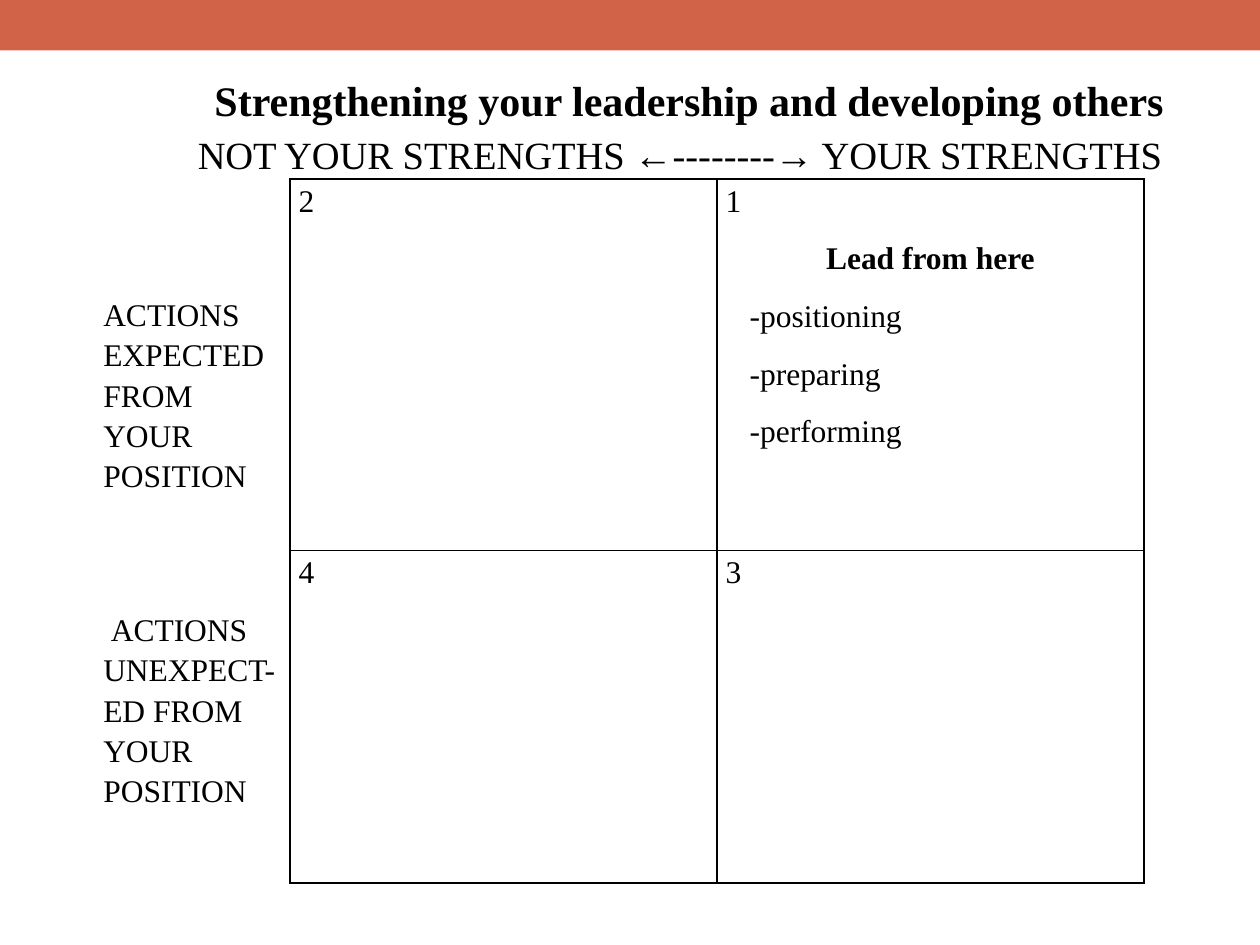
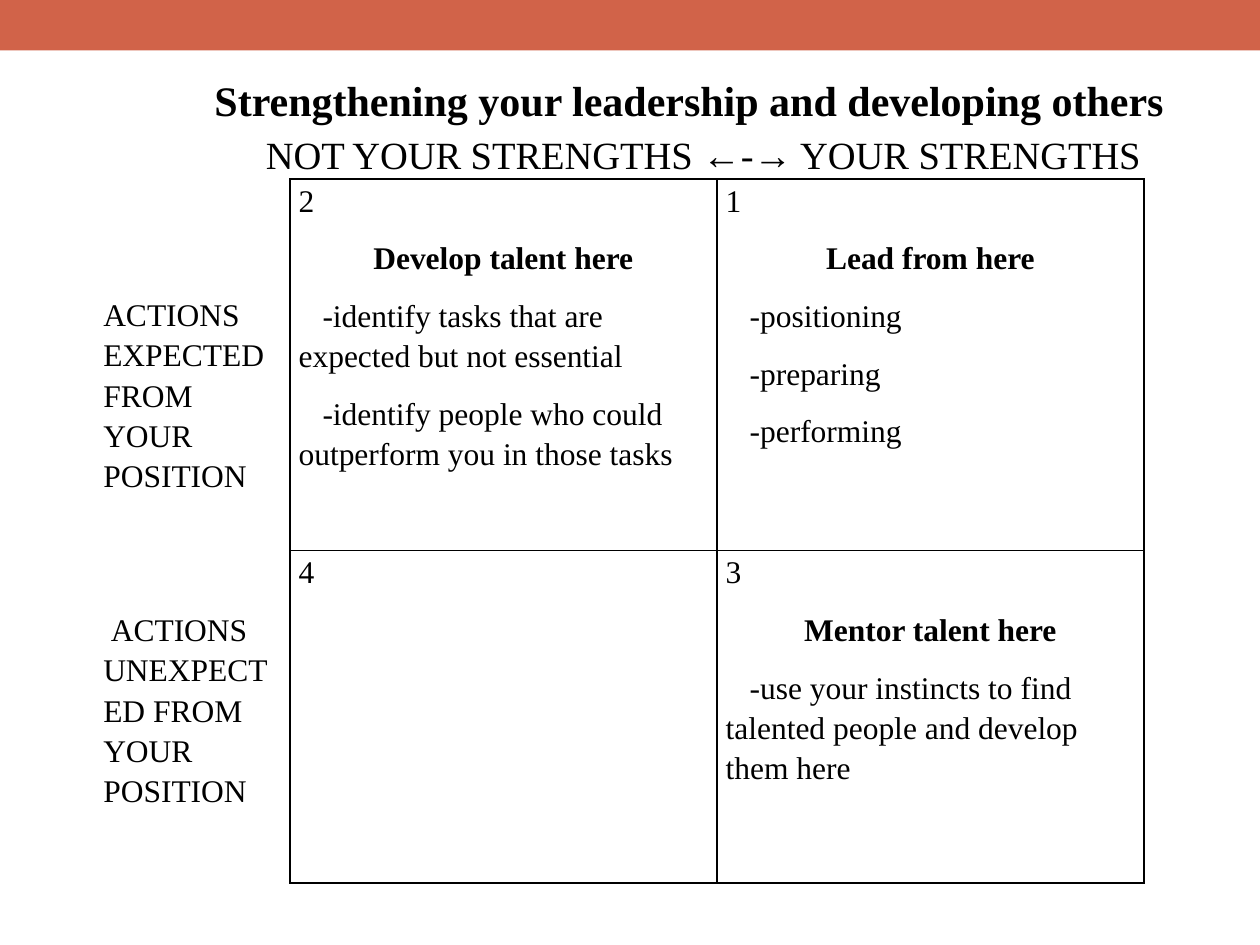
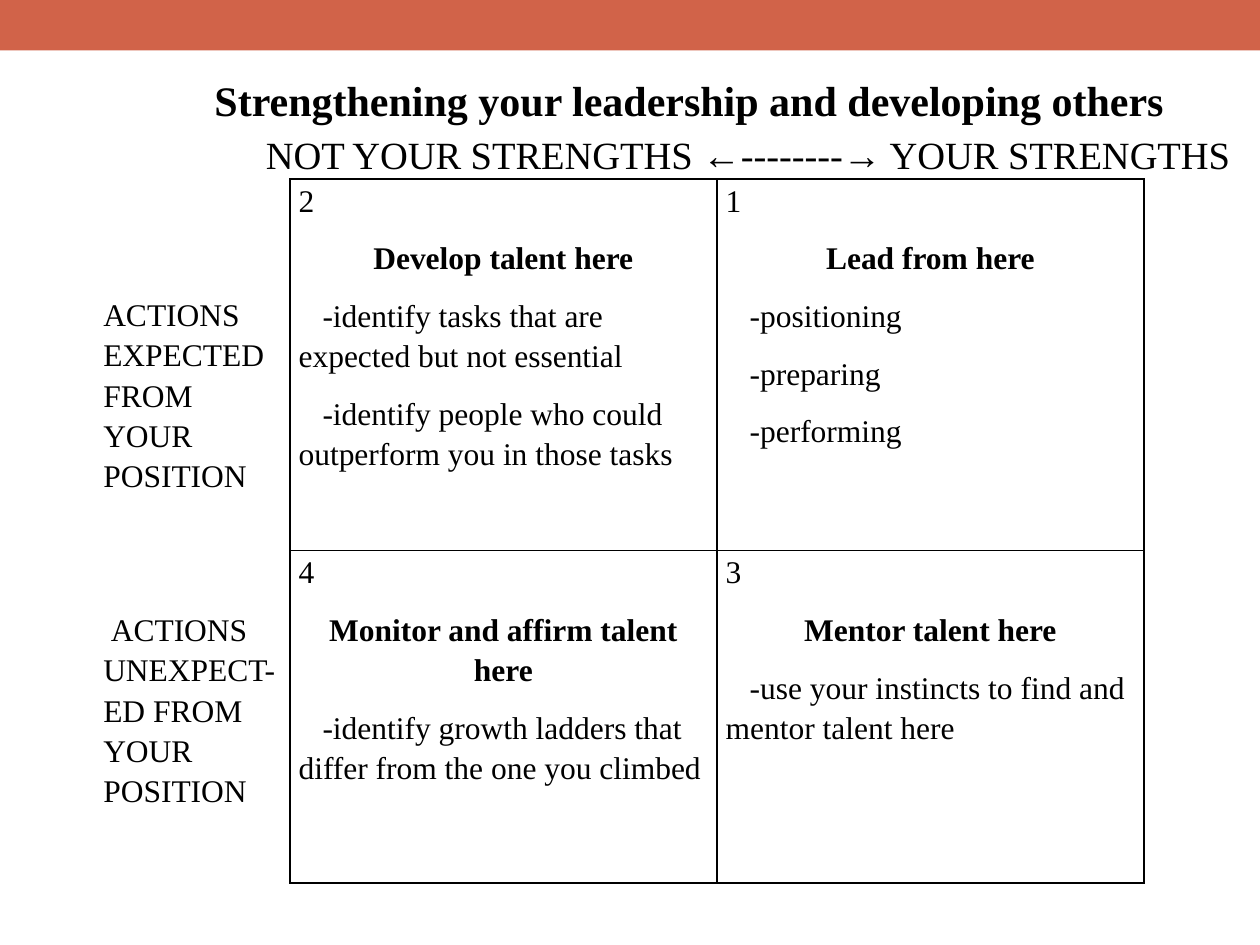
from dataclasses import dataclass

from lxml.etree import SubElement
from pptx import Presentation
from pptx.dml.color import RGBColor
from pptx.enum.shapes import MSO_SHAPE
from pptx.enum.text import MSO_ANCHOR, PP_ALIGN
from pptx.oxml.ns import qn
from pptx.util import Inches, Pt


@dataclass(frozen=True)
class Theme:
    font: str = "Times New Roman"
    ink: RGBColor = RGBColor(0, 0, 0)
    band: RGBColor = RGBColor(0xD1, 0x63, 0x49)
    title: int = 24
    axis: int = 22
    body: int = 18
    line: int = 1


THEME = Theme()

TITLE = "Strengthening your leadership and developing others"
COLS = (1.55, 3.39, 3.39)
ROWS = (2.95, 2.64)
LABEL_TOPS = (0.91, 0.46)
LABEL_DENTS = (0, 0.06)
POINT_DENT = 0.19

EXPECTED = "ACTIONS EXPECTED FROM YOUR POSITION"
HYPHENED = "ACTIONS UNEXPECT-ED FROM YOUR POSITION"
WHOLE = "ACTIONS UNEXPECTED FROM YOUR POSITION"
LONG_AXIS = "NOT YOUR STRENGTHS ←--------→ YOUR STRENGTHS"
SHORT_AXIS = "NOT YOUR STRENGTHS ←-→ YOUR STRENGTHS"

# Each quadrant: number, then heading, then points
LEAD = ("1", "Lead from here", "-positioning", "-preparing", "-performing")
DEVELOP = (
    "2",
    "Develop talent here",
    "-identify tasks that are expected but not essential",
    "-identify people who could outperform you in those tasks",
)
MENTOR = (
    "3",
    "Mentor talent here",
    "-use your instincts to find talented people and develop them here",
)
MENTOR_END = (
    "3",
    "Mentor talent here",
    "-use your instincts to find and mentor talent here",
)
MONITOR = (
    "4",
    "Monitor and affirm talent here",
    "-identify growth ladders that differ from the one you climbed",
)

# Each slide: axis text, axis left, rows of label and two quadrants
SLIDES = (
    (LONG_AXIS, 1.57, ((EXPECTED, ("2",), LEAD), (HYPHENED, ("4",), ("3",)))),
    (SHORT_AXIS, 2.11, ((EXPECTED, DEVELOP, LEAD), (WHOLE, ("4",), MENTOR))),
    (LONG_AXIS, 2.11, ((EXPECTED, DEVELOP, LEAD), (HYPHENED, MONITOR, MENTOR_END))),
)


def style(para, size, bold=False, align=PP_ALIGN.LEFT):
    para.alignment = align
    for run in para.runs:
        font = run.font
        font.name = THEME.font
        font.size = Pt(size)
        font.bold = bold
        font.color.rgb = THEME.ink


def place(shape, left, top, width, height):
    shape.left, shape.top = Inches(left), Inches(top)
    shape.width, shape.height = Inches(width), Inches(height)


def strip(frame):
    """Remove the insets so that text starts at the edge of its box."""
    frame.margin_left = frame.margin_right = 0
    frame.margin_top = frame.margin_bottom = 0
    frame.vertical_anchor = MSO_ANCHOR.TOP
    frame.word_wrap = True


def add_band(prs, slide):
    """Draw the top band and move it to the master, behind everything."""
    band = slide.shapes.add_shape(
        MSO_SHAPE.RECTANGLE, 0, 0, prs.slide_width, Inches(0.4)
    )
    band.shadow.inherit = False
    band.fill.solid()
    band.fill.fore_color.rgb = THEME.band
    band.line.fill.background()
    band.element.nvSpPr.cNvPr.id = 20
    prs.slide_master.element.cSld.spTree.insert(2, band.element)


def add_title(slide):
    title = slide.shapes.title
    place(title, 0.94, 0.59, 9.06, 0.4)
    frame = title.text_frame
    frame.text = TITLE
    strip(frame)
    style(frame.paragraphs[0], THEME.title, True, PP_ALIGN.CENTER)


def add_axis(slide, text, left):
    box = slide.shapes.add_textbox(
        Inches(left), Inches(1.04), Inches(10 - left), Inches(0.36)
    )
    frame = box.text_frame
    frame.text = text
    strip(frame)
    style(frame.paragraphs[0], THEME.axis)


def set_edges(cell, sides):
    """Rule the named sides (of L, R, T, B) and clear the others."""
    props = cell._tc.get_or_add_tcPr()
    for side in "LRTB":
        line = SubElement(props, qn(f"a:ln{side}"), w=str(Pt(THEME.line)))
        if side in sides:
            fill = SubElement(line, qn("a:solidFill"))
            SubElement(fill, qn("a:srgbClr"), val=str(THEME.ink))
        else:
            SubElement(line, qn("a:noFill"))
    cell.fill.background()


def fill_cell(cell, lines, top=0):
    cell.margin_left = cell.margin_right = Inches(0.07)
    cell.margin_top, cell.margin_bottom = Inches(top), 0
    cell.text_frame.text = "\n".join(lines)
    for para in cell.text_frame.paragraphs:
        style(para, THEME.body)
        para.line_spacing = 1.15
        para.space_after = Pt(10)


def indent(para, size):
    para._p.get_or_add_pPr().set("indent", str(Inches(size)))


def add_label(cell, text, top, dent):
    fill_cell(cell, [text], top)
    indent(cell.text_frame.paragraphs[0], dent)
    set_edges(cell, "R")


def add_quad(cell, lines):
    fill_cell(cell, lines)
    for i, para in enumerate(cell.text_frame.paragraphs):
        if i == 1:
            style(para, THEME.body, True, PP_ALIGN.CENTER)
        elif i > 1:
            indent(para, POINT_DENT)
    set_edges(cell, "LRTB")


def add_grid(slide, rows):
    frame = slide.shapes.add_table(
        len(ROWS), len(COLS), Inches(0.75), Inches(1.42),
        Inches(sum(COLS)), Inches(sum(ROWS)),
    )
    table = frame.table
    table.first_row = table.horz_banding = False
    for col, width in zip(table.columns, COLS):
        col.width = Inches(width)
    for i, (label, *quads) in enumerate(rows):
        table.rows[i].height = Inches(ROWS[i])
        add_label(table.cell(i, 0), label, LABEL_TOPS[i], LABEL_DENTS[i])
        for j, lines in enumerate(quads, 1):
            add_quad(table.cell(i, j), lines)


def main():
    prs = Presentation()
    prs.slide_width, prs.slide_height = Inches(10), Inches(7.5)
    for i, (axis, left, rows) in enumerate(SLIDES):
        slide = prs.slides.add_slide(prs.slide_layouts[5])
        if i == 0:
            add_band(prs, slide)
        add_title(slide)
        add_axis(slide, axis, left)
        add_grid(slide, rows)
    prs.save("out.pptx")


if __name__ == "__main__":
    main()
